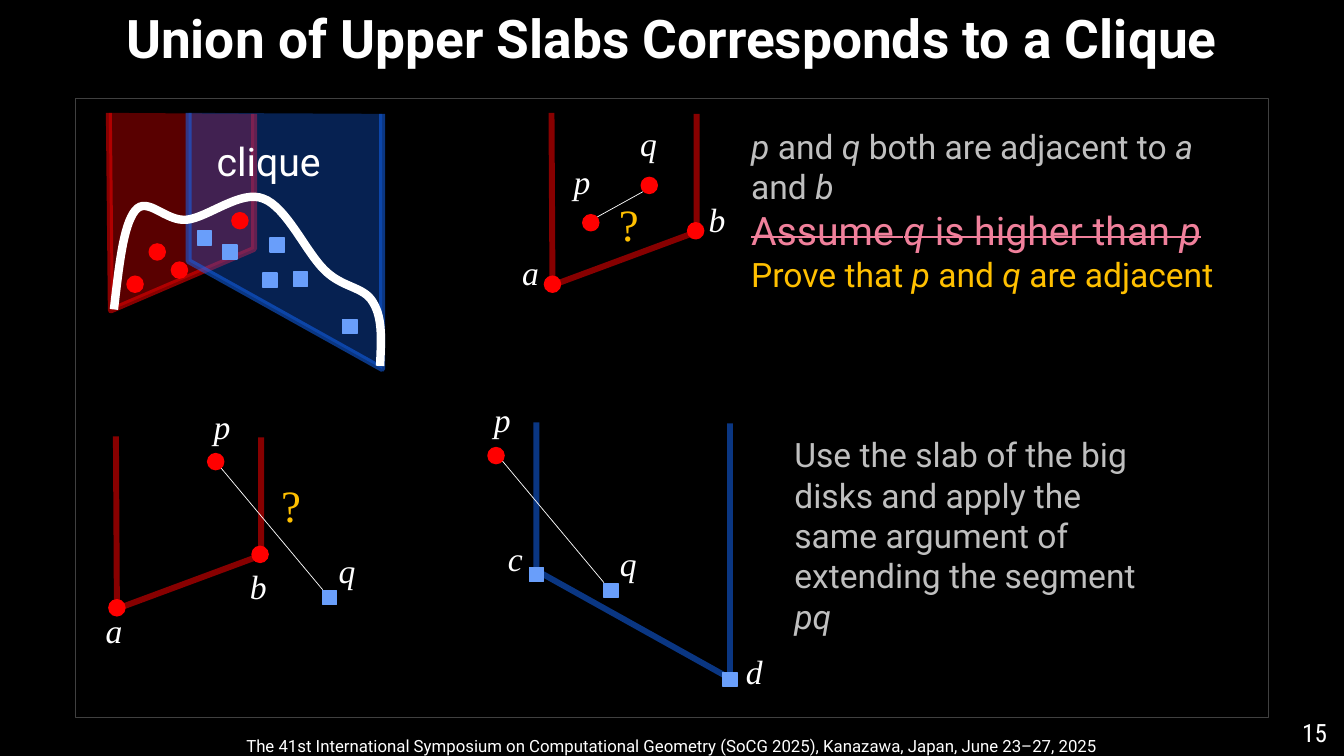
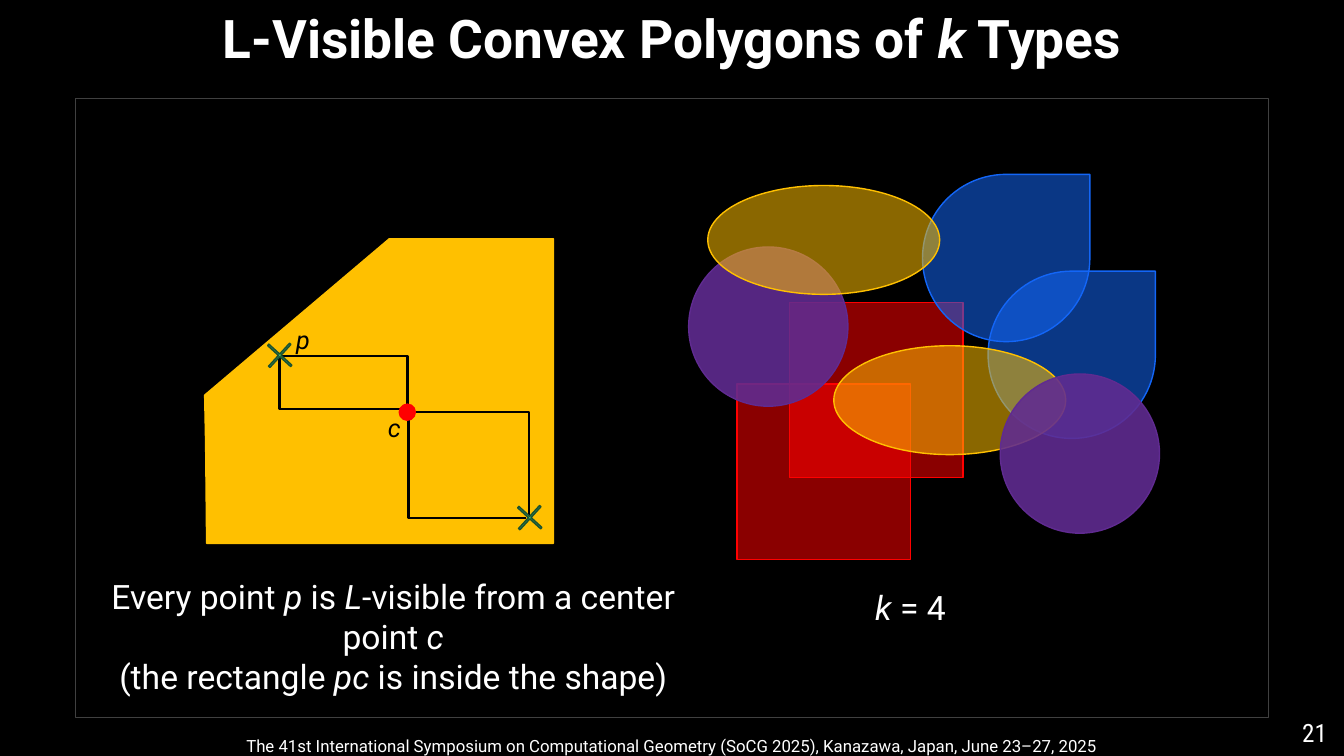
import pptx
import pptx.util
import pptx.dml.color
import pptx.enum.shapes
import pptx.enum.text
import pptx.oxml.xmlchemy
import pptx.oxml.ns
from lxml import etree

PX = 9144  # EMU in one px, 100 px to the inch
KIND = pptx.enum.shapes.MSO_SHAPE
LINK = pptx.enum.shapes.MSO_CONNECTOR
ALIGN = {"l": pptx.enum.text.PP_ALIGN.LEFT, "c": pptx.enum.text.PP_ALIGN.CENTER,
         "r": pptx.enum.text.PP_ALIGN.RIGHT}
HEX = {"black": "000000", "white": "FFFFFF", "edge": "404040", "grey": "BFBFBF",
       "red": "FF0000", "blue": "1366F7", "sky": "699EFA", "pink": "F0809B",
       "gold": "FFC000", "plum": "602B91", "green": "3FB96C", "pine": "1C512F"}
SANS, SLIM, SERIF = "Roboto", "Roboto Condensed", "Times New Roman"

# Shared content; text between asterisks is italic
WIDE, HIGH = 1333, 750
TITLE = (0, 7, WIDE, 84)
FRAME = (75, 98, 1183, 614)
FOOT = (0, 725, WIDE, 25)
PAGE = (1076, 707, 250, 83)
VENUE = ("The 41st International Symposium on Computational Geometry (SoCG 2025), "
         "Kanazawa, Japan, June 23–27, 2025")

# Clique slide
TALL = [(0, 0), (2, 196), (144, 135), (144, 1)]
SMALL = [(0, 0), (1, 171), (144, 118), (144, 1)]
BIG = [(0, 0), (0, 147), (192, 254), (192, 1)]
SLABS = [  # outline, left, top, colour, opacity of fill
    (BIG, 532, 419, "blue", 0), (TALL, 108, 112, "red", 35),
    (BIG, 187, 112, "blue", 33), (SMALL, 547, 112, "red", 0),
    (SMALL, 115, 433, "red", 0)]
CURVE = [(113, 307), (118, 265), (122, 224), (134, 209), (146, 194), (164, 220),
         (185, 218), (206, 216), (239, 188), (261, 197), (284, 205), (304, 251),
         (322, 268), (340, 286), (361, 284), (370, 300), (380, 316), (378, 339),
         (377, 363)]
EDGES = [(638, 190, 591, 216), (599, 578, 498, 457), (320, 585, 219, 464)]
DOTS = [(148, 242), (126, 274), (230, 211), (170, 260), (578, 213), (636, 176),
        (682, 221), (540, 274), (250, 542), (108, 595), (484, 444), (206, 450)]
BOXES = [(340, 317), (291, 270), (221, 243), (268, 236), (261, 271), (196, 229),
         (599, 579), (525, 563), (717, 667), (320, 586)]
NAMES = [("a", 508, 245), ("b", 693, 192), ("q", 625, 117), ("p", 559, 155),
         ("a", 95, 600), ("b", 238, 557), ("q", 605, 534), ("p", 480, 391),
         ("c", 494, 529), ("d", 730, 641), ("q", 326, 541), ("p", 202, 398)]
ASKS = [(604, 190), (269, 469)]
CLAIM = ["*p* and *q* both are adjacent to *a* and *b*",
         ("Assume *q* is higher than *p*",
          {"size": 28, "color": "pink", "strike": True}),
         ("Prove that *p* and *q* are adjacent", {"color": "gold"})]
HINT = ["Use the slab of the big",
        "disks and apply the same argument of extending the segment *pq*"]

# Polygon slide
HOUSE = [(203, 392), (386, 237), (549, 237), (549, 539), (205, 539), (204, 441)]
BENDS = [  # from, to, place of the bend in thousandths of the width
    (278, 353, 403, 406, -8), (405, 406, 522, 514, 1),
    (412, 409, 523, 512, 1016), (279, 353, 404, 401, 1000)]
MARKS = [(262, 337), (510, 498)]
FORMS = {"rect": (KIND.RECTANGLE, 172, 174, "red", 54),
         "tear": (KIND.TEAR, 166, 166, "blue", 54),
         "oval": (KIND.OVAL, 230, 108, "gold", 54),
         "disk": (KIND.OVAL, 158, 158, "plum", 89)}
PILE = [("rect", 783, 300), ("tear", 980, 269), ("rect", 731, 381),
        ("tear", 915, 173), ("oval", 827, 343), ("disk", 683, 245),
        ("disk", 992, 371), ("oval", 702, 184)]
RULE = ["Every point *p* is *L*-visible from a center point *c*",
        "(the rectangle *pc* is inside the shape)"]


def emu(nums):
    return [pptx.util.Emu(round(n * PX)) for n in nums]


def rgb(name):
    return pptx.dml.color.RGBColor.from_string(HEX[name])


def fade(shape, where, share):
    """Set the opacity, in percent, of the colour under one part of spPr."""
    for node in shape.element.spPr.xpath(where + "/a:srgbClr"):
        etree.SubElement(node, pptx.oxml.ns.qn("a:alpha")).set("val", str(share * 1000))


def paint(shape, fill=None, line=None, width=1, fill_op=100, line_op=100):
    shape.shadow.inherit = False
    if fill:
        shape.fill.solid()
        shape.fill.fore_color.rgb = rgb(fill)
        if fill_op < 100:
            fade(shape, "a:solidFill", fill_op)
    else:
        shape.fill.background()
    if line:
        shape.line.color.rgb = rgb(line)
        shape.line.width = pptx.util.Pt(width)
        if line_op < 100:
            fade(shape, "a:ln/a:solidFill", line_op)
    else:
        shape.line.fill.background()
    return shape


def write(shape, lines, size=24, font=SANS, color="white", align="l",
          bold=False, strike=False, wrap=True, space=1.0):
    frame = shape.text_frame
    frame.word_wrap = wrap
    frame.auto_size = pptx.enum.text.MSO_AUTO_SIZE.NONE
    frame.vertical_anchor = pptx.enum.text.MSO_ANCHOR.TOP
    for n, line in enumerate(lines):
        words, own = line if isinstance(line, tuple) else (line, {})
        look = {"size": size, "color": color, "strike": strike, **own}
        para = frame.add_paragraph() if n else frame.paragraphs[0]
        para.alignment = ALIGN[align]
        para.line_spacing = space
        para.space_before = pptx.util.Pt(0)
        if shape.is_placeholder:  # no bullet, no indent
            props = para._p.get_or_add_pPr()
            props.set("marL", "0")
            props.set("indent", "0")
            etree.SubElement(props, pptx.oxml.ns.qn("a:buNone"))
        for k, part in enumerate(words.split("*")):
            if not part:
                continue
            run = para.add_run()
            run.text = part
            run.font.size = pptx.util.Pt(look["size"])
            run.font.name = font
            run.font.bold = bold
            run.font.italic = k % 2 == 1
            run.font.color.rgb = rgb(look["color"])
            if look["strike"]:
                run._r.get_or_add_rPr().set("strike", "sngStrike")


def label(slide, box, lines, **look):
    write(slide.shapes.add_textbox(*emu(box)), lines, **look)


def form(slide, kind, box, **look):
    return paint(slide.shapes.add_shape(kind, *emu(box)), **look)


def trace(slide, points, close=False, **look):
    points = [emu(p) for p in points]
    pen = slide.shapes.build_freeform(*points[0], scale=1.0)
    pen.add_line_segments(points[1:], close=close)
    return paint(pen.convert_to_shape(), **look)


def link(slide, kind, ends, color, width):
    wire = slide.shapes.add_connector(kind, *emu(ends))
    wire.line.color.rgb = rgb(color)
    wire.line.width = pptx.util.Pt(width)
    etree.SubElement(wire.element.spPr, pptx.oxml.ns.qn("a:effectLst"))
    return wire


def smooth(points, steps=16):
    """Points along a chain of cubic curves."""
    out = [points[0]]
    for k in range(0, len(points) - 1, 3):
        a, b, c, d = points[k:k + 4]
        for n in range(1, steps + 1):
            t = n / steps
            u = 1 - t
            out.append([u**3 * w + 3 * u * u * t * x + 3 * u * t * t * y + t**3 * z
                        for w, x, y, z in zip(a, b, c, d)])
    return out


def start(deck, title, page, box, lines, **look):
    """A slide with title, frame, footer, page number and body text."""
    slide = deck.slides.add_slide(deck.slide_layouts[1])
    body = slide.placeholders[1]
    for shape, place in ((slide.shapes.title, TITLE), (body, box)):
        shape.left, shape.top, shape.width, shape.height = emu(place)
    write(slide.shapes.title, [title], size=38, bold=True, align="c", space=0.9)
    write(body, lines, **look)
    form(slide, KIND.RECTANGLE, FRAME, line="edge")
    foot = form(slide, KIND.RECTANGLE, FOOT, fill="black")
    write(foot, [VENUE], size=12, align="c")
    label(slide, PAGE, [page], size=18, font=SLIM, align="r")
    return slide


def clique(deck):
    slide = start(deck, "Union of Upper Slabs Corresponds to a Clique", "15",
                  (735, 120, 505, 180), CLAIM, color="grey")
    for shape, left, top, color, share in SLABS:
        trace(slide, [(left + x, top + y) for x, y in shape],
              fill=color if share else None, fill_op=share,
              line=color, width=4.25, line_op=52)
    label(slide, (198, 131, 137, 57), ["clique"], size=28, align="c")
    trace(slide, smooth(CURVE), line="white", width=6)
    for ends in EDGES:
        link(slide, LINK.STRAIGHT, ends, "white", 0.5)
    for kind, side, color, spots in ((KIND.OVAL, 16, "red", DOTS),
                                     (KIND.RECTANGLE, 14, "sky", BOXES)):
        for x, y in spots:
            form(slide, kind, (x, y, side, side), fill=color, line=color)
    for name, x, y in NAMES:
        label(slide, (x, y, 37, 50), [f"*{name}*"], font=SERIF, wrap=False)
    for x, y in ASKS:
        label(slide, (x, y, 40, 64), ["?"], size=32, font=SERIF,
              color="gold", wrap=False)
    label(slide, (778, 426, 368, 212), HINT, color="grey")


def types(deck):
    slide = start(deck, "L-Visible Convex Polygons of *k* Types", "21",
                  (72, 566, 636, 131), RULE, align="c")
    trace(slide, HOUSE, close=True, fill="gold", line="gold")
    for *ends, bend in BENDS:
        wire = link(slide, LINK.ELBOW, ends, "black", 1.75)
        for node in wire.element.spPr.xpath("a:prstGeom/a:avLst"):
            guide = etree.SubElement(node, pptx.oxml.ns.qn("a:gd"))
            guide.set("name", "adj1")
            guide.set("fmla", f"val {bend * 100}")
    form(slide, KIND.OVAL, (396, 401, 16, 16), fill="red", line="red")
    for x, y in MARKS:
        mark = form(slide, KIND.CROSS, (x, y, 31, 31), fill="green", line="pine")
        mark.adjustments[0] = 0.47
        mark.rotation = 312.4
    for name, x, y in PILE:
        kind, wide, high, color, share = FORMS[name]
        form(slide, kind, (x, y, wide, high), fill=color, fill_op=share, line=color)
    label(slide, (721, 577, 364, 50), ["*k* = 4"], align="c")
    for name, x, y in (("c", 375, 404), ("p", 284, 317)):
        label(slide, (x, y, 37, 40), [f"*{name}*"], size=18, color="black", wrap=False)


def main():
    deck = pptx.Presentation()
    deck.slide_width, deck.slide_height = emu((WIDE, HIGH))
    back = deck.slide_master.background.fill
    back.solid()
    back.fore_color.rgb = rgb("black")
    clique(deck)
    types(deck)
    deck.save("out.pptx")


if __name__ == "__main__":
    main()
